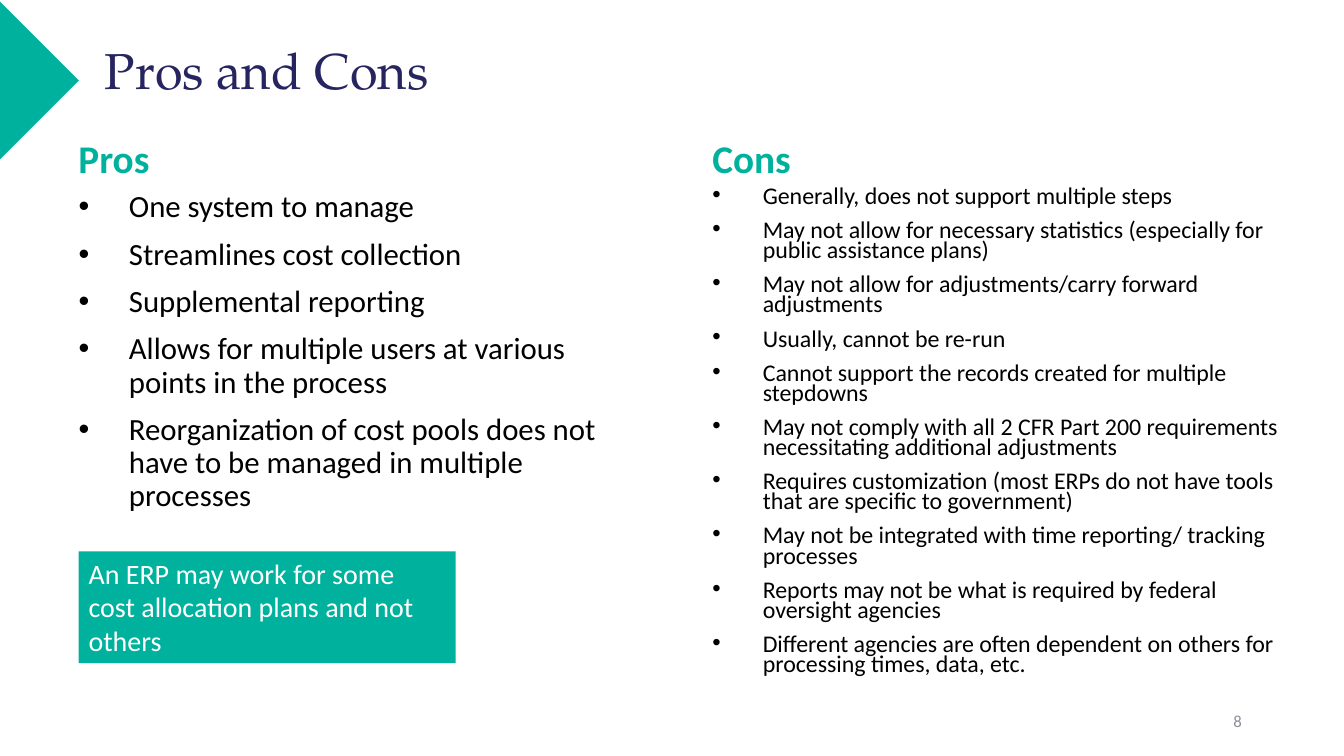
from lxml.etree import SubElement
from pptx import Presentation
from pptx.dml.color import RGBColor
from pptx.enum.shapes import MSO_SHAPE as Preset
from pptx.enum.text import MSO_ANCHOR as Anchor, MSO_AUTO_SIZE as AutoSize, PP_ALIGN as Align
from pptx.oxml.ns import qn
from pptx.util import Pt

COLORS = {"teal": "00B29D", "navy": "272560", "gray": "8E8E9C",
          "black": "000000", "white": "FFFFFF"}

PROS = [
    "One system to manage",
    "Streamlines cost collection",
    "Supplemental reporting",
    "Allows for multiple users at various points in the process",
    "Reorganization of cost pools does not have to be managed in multiple processes",
]
CONS = [
    "Generally, does not support multiple steps",
    "May not allow for necessary statistics (especially for public assistance plans)",
    "May not allow for adjustments/carry forward adjustments",
    "Usually, cannot be re-run",
    "Cannot support the records created for multiple stepdowns",
    "May not comply with all 2 CFR Part 200 requirements necessitating additional adjustments",
    "Requires customization (most ERPs do not have tools that are specific to government)",
    "May not be integrated with time reporting/ tracking processes",
    "Reports may not be what is required by federal oversight agencies",
    "Different agencies are often dependent on others for processing times, data, etc.",
]


class SlideBuilder:
    body_font = "Calibri"
    title_font = "TeX Gyre Pagella"
    bullet_indent = Pt(36)

    def __init__(self, slide):
        self.slide = slide

    def fill_text(self, shape, lines, size, color, font=None, bold=False, align=Align.LEFT,
                  anchor=Anchor.TOP, spacing=1.0, before=0, bullets=False):
        frame = shape.text_frame
        frame.word_wrap = True
        frame.auto_size = AutoSize.NONE
        frame.vertical_anchor = anchor
        frame.text = "\n".join(lines)
        for paragraph in frame.paragraphs:
            paragraph.alignment = align
            paragraph.line_spacing = spacing
            paragraph.space_before = Pt(before)
            paragraph.font.name = font or self.body_font
            paragraph.font.size = Pt(size)
            paragraph.font.bold = bold
            paragraph.font.color.rgb = RGBColor.from_string(COLORS[color])
            if bullets:
                self.bullet(paragraph)

    def bullet(self, paragraph):
        properties = paragraph._p.get_or_add_pPr()
        properties.set("marL", str(self.bullet_indent))
        properties.set("indent", str(-self.bullet_indent))
        font = SubElement(properties, qn("a:buFont"))
        font.set("typeface", "Arial")
        mark = SubElement(properties, qn("a:buChar"))
        mark.set("char", "•")
        properties.append(properties.find(qn("a:defRPr")))

    def title(self, words, left, top, width, height):
        heading = self.slide.shapes.title
        heading.left, heading.top = Pt(left), Pt(top)
        heading.width, heading.height = Pt(width), Pt(height)
        self.fill_text(heading, [words], 36, "navy", font=self.title_font)

    def text(self, lines, left, top, width, height, size, color, **style):
        box = self.slide.shapes.add_textbox(Pt(left), Pt(top), Pt(width), Pt(height))
        self.fill_text(box, lines, size, color, **style)

    def block(self, left, top, width, height, color, rotation=0):
        block = self.slide.shapes.add_shape(
            Preset.RECTANGLE, Pt(left), Pt(top), Pt(width), Pt(height))
        block.shadow.inherit = False
        block.fill.solid()
        block.fill.fore_color.rgb = RGBColor.from_string(COLORS[color])
        block.line.fill.background()
        block.rotation = rotation
        return block

    def column(self, heading, points, left, top, width, height, size, spacing):
        self.text([heading], left, 96.5, 365, 58.3, 28, "teal",
                  bold=True, spacing=0.9, before=10)
        self.text(points, left, top, width, height, size, "black",
                  spacing=spacing, before=10, bullets=True)


def main():
    deck = Presentation()
    deck.slide_width, deck.slide_height = Pt(960), Pt(540)
    page = SlideBuilder(deck.slides.add_slide(deck.slide_layouts[5]))

    page.title("Pros and Cons", 67.7, 24.5, 859, 51.1)
    page.text(["8"], 678.2, 500.4, 216, 28.8, 12, "gray",
              align=Align.RIGHT, anchor=Anchor.MIDDLE)
    page.block(-67, 6.5, 102.2, 102.2, "teal", rotation=45)
    page.column("Cons", CONS, 501.8, 131, 425.5, 360, 17.1, 0.7)
    page.column("Pros", PROS, 49, 133.2, 419, 403.2, 22, 0.9)
    callout = page.block(56.2, 393.8, 269.3, 79.9, "teal")
    page.fill_text(callout, ["An ERP may work for some cost allocation plans and not others"],
                   20, "white")

    deck.save("out.pptx")


if __name__ == "__main__":
    main()
